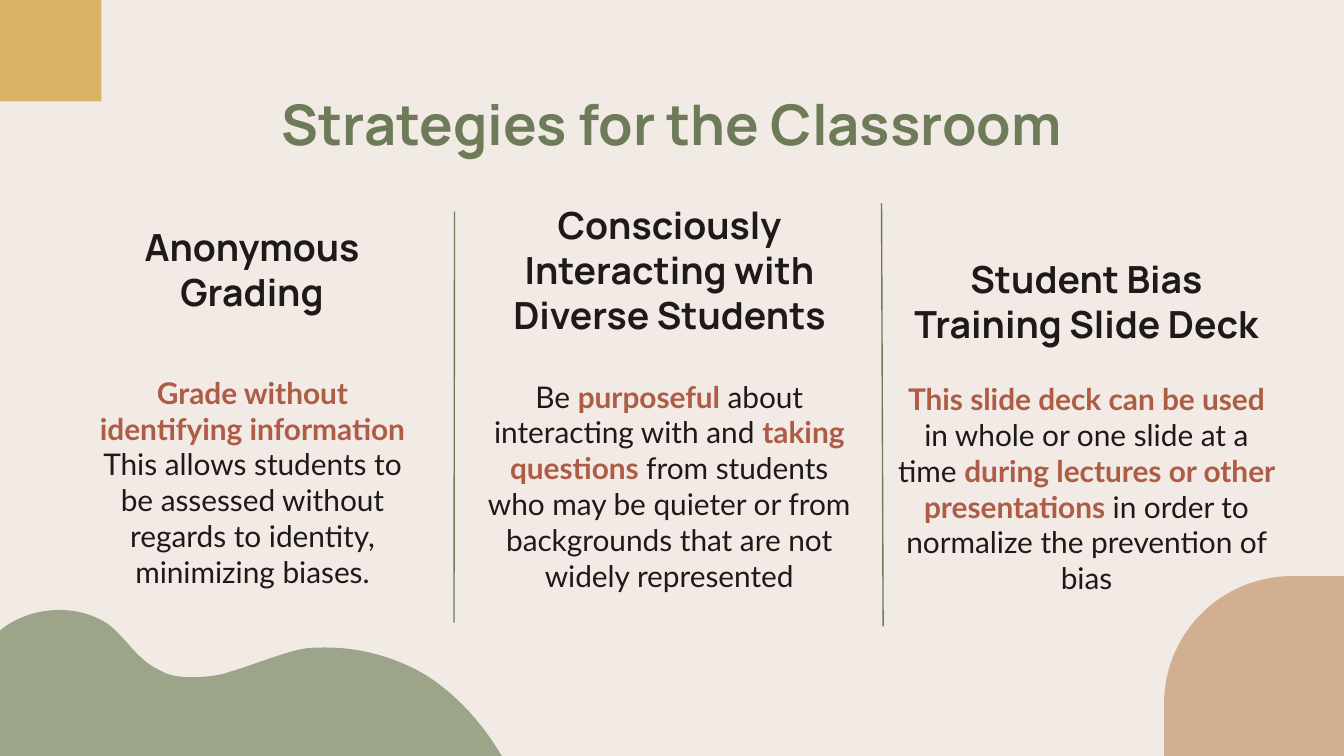
"""Builds the slide on classroom strategies: three columns between thin dividers."""
from lxml.etree import SubElement
from pptx import Presentation
from pptx.dml.color import RGBColor
from pptx.enum.shapes import MSO_CONNECTOR, MSO_SHAPE
from pptx.enum.text import MSO_ANCHOR as ANCHOR, PP_ALIGN as ALIGN
from pptx.oxml.ns import qn
from pptx.util import Cm, Pt

COLORS = {
    "background": "F1EAE5",
    "gold": "DCB364",
    "tan": "D3AF92",
    "sage": "9CA589",
    "green": "6E7B59",
    "rust": "AF5C46",
    "ink": "1F191A",
}
RGB = {name: RGBColor.from_string(value) for name, value in COLORS.items()}


def add_outline(shapes, start, segments, color):
    """Draw a filled outline from straight (one point) and cubic (three points) segments."""
    builder = shapes.build_freeform(Cm(start[0]), Cm(start[1]))
    builder.add_line_segments([(Cm(x), Cm(y)) for segment in segments for x, y in segment])
    shape = builder.convert_to_shape()
    lines = iter(list(shape._element.iter(qn("a:lnTo"))))
    for segment in segments:
        first, *others = [next(lines) for _ in segment]
        if others:
            first.tag = qn("a:cubicBezTo")
            for line in others:
                first.append(line[0])
                line.getparent().remove(line)
    shape.shadow.inherit = False
    shape.fill.solid()
    shape.fill.fore_color.rgb = RGB[color]
    shape.line.fill.background()


def write_text(shape, box, runs, font_name, size, anchor=ANCHOR.TOP):
    """Place a text shape and fill it with (text, color, bold) runs, centred."""
    shape.left, shape.top, shape.width, shape.height = map(Cm, box)
    frame = shape.text_frame
    frame.word_wrap = True
    frame.vertical_anchor = anchor
    frame.margin_left = frame.margin_right = Cm(0.25)
    frame.margin_top = frame.margin_bottom = Cm(0.25)
    paragraph = frame.paragraphs[0]
    paragraph.alignment = ALIGN.CENTER
    paragraph.font.name = font_name
    paragraph.font.size = Pt(size)
    for text, color, bold in runs:
        run = paragraph.add_run()
        run.text = text
        run.font.bold = bold
        run.font.color.rgb = RGB[color]


presentation = Presentation()
presentation.slide_width = Cm(25.4)
presentation.slide_height = Cm(14.29)
slide = presentation.slides.add_slide(presentation.slide_layouts[5])
slide.background.fill.solid()
slide.background.fill.fore_color.rgb = RGB["background"]
shapes = slide.shapes

square = shapes.add_shape(MSO_SHAPE.RECTANGLE, 0, 0, Cm(1.92), Cm(1.92))
square.shadow.inherit = False
square.fill.solid()
square.fill.fore_color.rgb = RGB["gold"]
square.line.fill.background()

add_outline(shapes, (24.43, 10.89), [
    [(23.09, 10.89), (22, 11.96), (22, 13.31)],
    [(22, 14.29)],
    [(25.4, 14.29)],
    [(25.4, 10.89)],
], "tan")

add_outline(shapes, (1.12, 11.53), [
    [(0.64, 11.53), (0.13, 11.73), (-0.15, 12.07)],
    [(-0.08, 14.45)],
    [(0.36, 14.45), (0.81, 14.45), (1.27, 14.45)],
    [(3.63, 14.45), (5.97, 14.5), (8.33, 14.5)],
    [(8.76, 14.5), (9.19, 14.5), (9.6, 14.5)],
    [(9.25, 13.84), (8.76, 13.23), (8.08, 12.78)],
    [(7.54, 12.45), (6.86, 12.24), (6.17, 12.24)],
    [(5.99, 12.24), (5.79, 12.24), (5.61, 12.29)],
    [(5.18, 12.4), (4.78, 12.57), (4.34, 12.7)],
    [(4.11, 12.78), (3.86, 12.8), (3.63, 12.8)],
    [(3.4, 12.8), (3.2, 12.78), (3.02, 12.67)],
    [(2.59, 12.47), (2.41, 12.09), (2.06, 11.81)],
    [(1.8, 11.63), (1.47, 11.53), (1.12, 11.53)],
], "sage")

write_text(shapes.title, (2, 1.45, 21.41, 1.32),
           [("Strategies for the Classroom", "green", True)], "Manrope", 30)

columns = [
    ("Anonymous Grading", (1.22, 3.73, 7.09, 2.46), ANCHOR.BOTTOM, (1.46, 6.83, 6.63, 4.78), [
        ("Grade without identifying information ", "rust", True),
        ("This allows students to be assessed without regards to identity, minimizing biases.",
         "ink", False),
    ]),
    ("Consciously Interacting with Diverse Students", (8.49, 3.58, 8.33, 3.07), ANCHOR.TOP,
     (8.88, 6.9, 7.54, 4.62), [
        ("Be ", "ink", False),
        ("purposeful ", "rust", True),
        ("about interacting with and ", "ink", False),
        ("taking questions ", "rust", True),
        ("from students who may be quieter or from backgrounds that are not widely represented",
         "ink", False),
    ]),
    ("Student Bias Training Slide Deck", (16.99, 3.41, 7.09, 3.38), ANCHOR.BOTTOM,
     (16.71, 6.95, 7.65, 4.19), [
        ("This slide deck can be used ", "rust", True),
        ("in whole or one slide at a time ", "ink", False),
        ("during lectures or other presentations ", "rust", True),
        ("in order to normalize the prevention of bias", "ink", False),
    ]),
]
for heading, heading_box, anchor, body_box, body_runs in columns:
    write_text(shapes.add_textbox(0, 0, 0, 0), heading_box, [(heading, "ink", True)],
               "Manrope", 20, anchor)
    write_text(shapes.add_textbox(0, 0, 0, 0), body_box, body_runs, "Lato", 16)

for ends in [(8.59, 4, 8.58, 11.77), (16.66, 3.84, 16.69, 11.84)]:
    divider = shapes.add_connector(MSO_CONNECTOR.STRAIGHT, *map(Cm, ends))
    divider.line.color.rgb = RGB["green"]
    divider.line.width = Pt(0.75)
    SubElement(divider._element.spPr, qn("a:effectLst"))

presentation.save("out.pptx")
